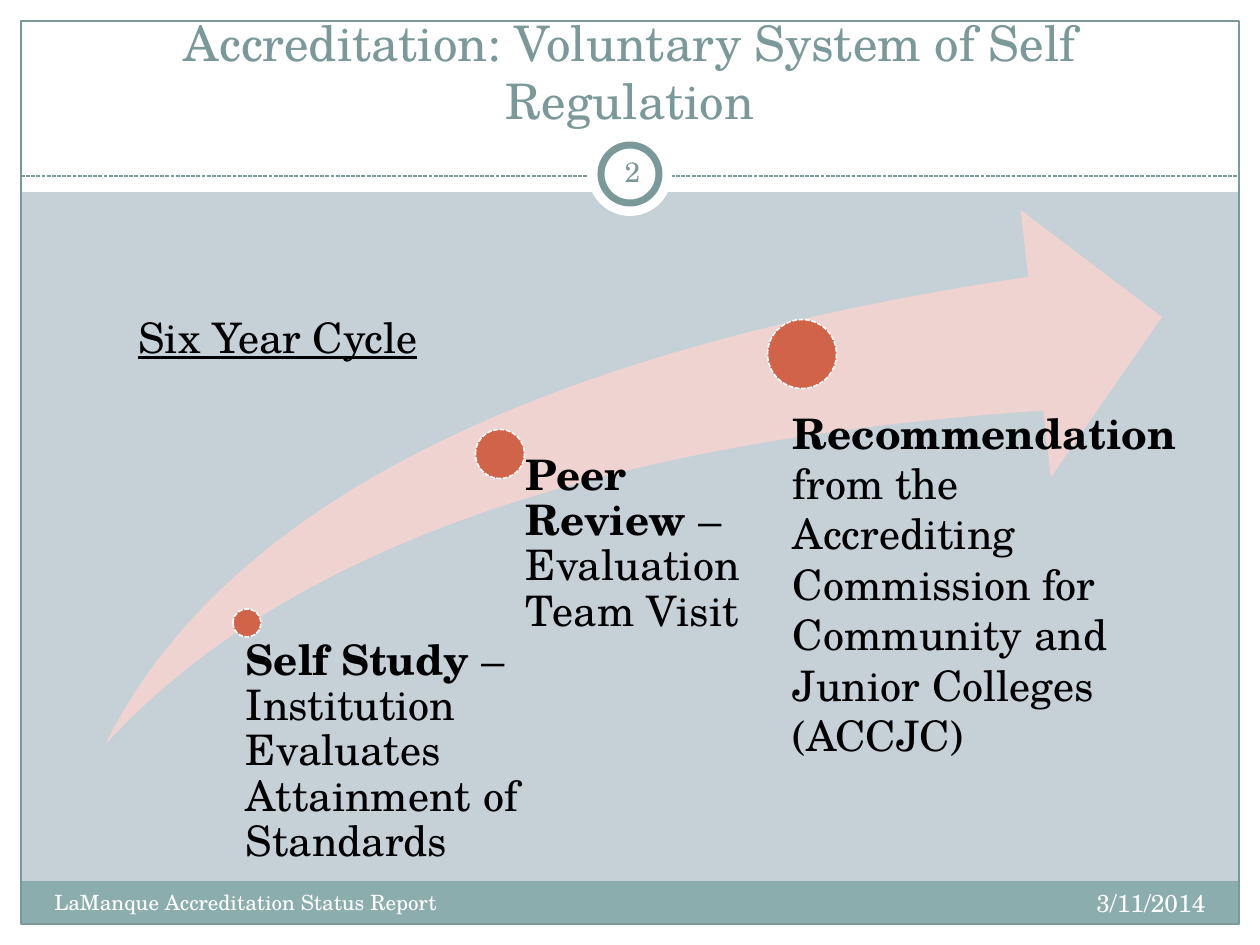
from dataclasses import dataclass

import pptx
import pptx.dml.color
import pptx.enum.dml
import pptx.enum.shapes
import pptx.enum.text
import pptx.oxml
import pptx.oxml.ns
import pptx.util

SHAPE = pptx.enum.shapes.MSO_SHAPE
ALIGN = pptx.enum.text.PP_ALIGN
ANCHOR = pptx.enum.text.MSO_ANCHOR
AUTO = pptx.enum.text.MSO_AUTO_SIZE
DASH = pptx.enum.dml.MSO_LINE.SQUARE_DOT
PX = pptx.util.Inches(1) / 126
WIDTH, HEIGHT = 1260, 945


@dataclass(frozen=True)
class Theme:
    font: str = "TeX Gyre Schola"
    ground: str = "C5D1D7"
    white: str = "FFFFFF"
    black: str = "000000"
    teal: str = "7C999A"
    footer: str = "8CADAE"
    arrow: str = "EED3D0"
    dot: str = "D16349"
    title: int = 28
    body: int = 24
    number: int = 16
    date: int = 14
    note: int = 12


def emu(*lengths):
    return [round(length * PX) for length in lengths]


def rgb(value):
    return pptx.dml.color.RGBColor.from_string(value)


def assign(target, values):
    for name, value in values.items():
        setattr(target, name, value)


class SlideBuilder:
    def __init__(self, page, theme):
        self.page = page
        self.theme = theme
        self.paint(page.background.fill, theme.ground)

    def paint(self, fill, color):
        fill.solid()
        fill.fore_color.rgb = rgb(color)

    def stroke(self, line, color, width, dash=None):
        self.paint(line.fill, color)
        assign(line, {"width": pptx.util.Pt(width), "dash_style": dash})

    def shape(self, kind, place, fill=None, line=None):
        """Add a preset shape; line is (color, width, dash) or None."""
        item = self.page.shapes.add_shape(kind, *emu(*place))
        item.shadow.inherit = False
        if fill:
            self.paint(item.fill, fill)
        else:
            item.fill.background()
        if line:
            self.stroke(item.line, *line)
        else:
            item.line.fill.background()
        return item

    def circle(self, center, diameter, fill, line=None):
        x, y = center
        place = (x - diameter / 2, y - diameter / 2, diameter, diameter)
        return self.shape(SHAPE.OVAL, place, fill, line)

    def rule(self, start, end, line):
        item = self.page.shapes.add_connector(
            pptx.enum.shapes.MSO_CONNECTOR.STRAIGHT, *emu(*start, *end))
        self.stroke(item.line, *line)
        item.element.spPr.append(pptx.oxml.parse_xml(
            f"<a:effectLst {pptx.oxml.ns.nsdecls('a')}/>"))

    def fill_text(self, box, spans, size, color, frame=None, para=None):
        """Fill a box with one paragraph of (text, font values) spans."""
        text = box.text_frame
        assign(text, {"word_wrap": True, "auto_size": AUTO.NONE, **(frame or {})})
        paragraph = text.paragraphs[0]
        assign(paragraph, para or {})
        for words, values in spans:
            span = paragraph.add_run()
            span.text = words
            assign(span.font, {"name": self.theme.font,
                               "size": pptx.util.Pt(size), **values})
            span.font.color.rgb = rgb(color)

    def text(self, place, spans, size, color, frame=None, para=None):
        box = self.page.shapes.add_textbox(*emu(*place))
        self.fill_text(box, spans, size, color, frame, para)

    def title(self, place, words):
        box = self.page.shapes.title
        assign(box, dict(zip(("left", "top", "width", "height"), emu(*place))))
        # Bring the title in front of the bands drawn so far.
        box.element.getparent().append(box.element)
        self.fill_text(box, [(words, {})], self.theme.title, self.theme.teal,
                       {"vertical_anchor": ANCHOR.BOTTOM},
                       {"alignment": ALIGN.CENTER})

    def step(self, dot, place, indent, heading, detail, spacing):
        center, diameter = dot
        theme = self.theme
        self.circle(center, diameter, theme.dot, (theme.white, 0.9, DASH))
        frame = {"margin_left": emu(indent)[0], "margin_top": 0,
                 "margin_right": 0, "margin_bottom": 0}
        self.text(place, [(heading, {"bold": True}), (detail, {"bold": False})],
                  theme.body, theme.black, frame, {"line_spacing": spacing})


def main():
    deck = pptx.Presentation()
    deck.slide_width, deck.slide_height = emu(WIDTH, HEIGHT)
    theme = Theme()
    slide = SlideBuilder(deck.slides.add_slide(deck.slide_layouts[5]), theme)

    edge = 21
    inner = WIDTH - 2 * edge
    bands = [
        (0, HEIGHT - edge, WIDTH, edge),
        (0, 0, WIDTH, 192),
        (0, 0, edge, HEIGHT),
        (WIDTH - edge, 0, edge, HEIGHT),
    ]
    for band in bands:
        slide.shape(SHAPE.RECTANGLE, band, theme.white)
    slide.shape(SHAPE.RECTANGLE, (edge, 881, inner, 43), theme.footer)
    slide.shape(SHAPE.RECTANGLE, (edge, edge, inner, HEIGHT - 2 * edge),
                line=(theme.teal, 0.75))
    slide.rule((edge, 176), (WIDTH - edge, 176), (theme.teal, 0.75, DASH))
    badge = (WIDTH // 2, 174)
    slide.circle(badge, 84, theme.white)
    slide.circle(badge, 58, theme.white, (theme.teal, 4))
    slide.title((42, 32, 1176, 104),
                "Accreditation: Voluntary System of Self Regulation")

    arrow = slide.shape(SHAPE.SWOOSH_ARROW, (105, 210, 1057, 535), theme.arrow)
    for index in range(2):
        arrow.adjustments[index] = 0.25

    steps = [
        (((247, 623), 28), (231, 639, 310, 233), 15, "Self Study ",
         "– Institution Evaluates Attainment of Standards", 0.9),
        (((500, 454), 49), (500, 454, 253, 359), 26, "Peer Review ",
         "– Evaluation Team Visit", 0.9),
        (((802, 354), 69), (756, 407, 431, 410), 37, "Recommendation",
         " from the Accrediting Commission for Community and"
         " Junior Colleges (ACCJC)", 1.0),
    ]
    for step in steps:
        slide.step(*step)

    slide.text((601, 141, 63, 61), [("2", {})], theme.number, theme.teal,
               {"vertical_anchor": ANCHOR.MIDDLE, "margin_left": emu(6)[0],
                "margin_right": emu(6)[0]}, {"alignment": ALIGN.CENTER})
    slide.text((42, 883, 494, 50), [("LaManque Accreditation Status Report", {})],
               theme.note, theme.white)
    slide.text((798, 882, 420, 50), [("3/11/2014", {})], theme.date, theme.white,
               para={"alignment": ALIGN.RIGHT})
    slide.text((126, 305, 325, 63), [("Six Year Cycle", {"underline": True})],
               theme.body, theme.black)
    deck.save("out.pptx")


if __name__ == "__main__":
    main()
